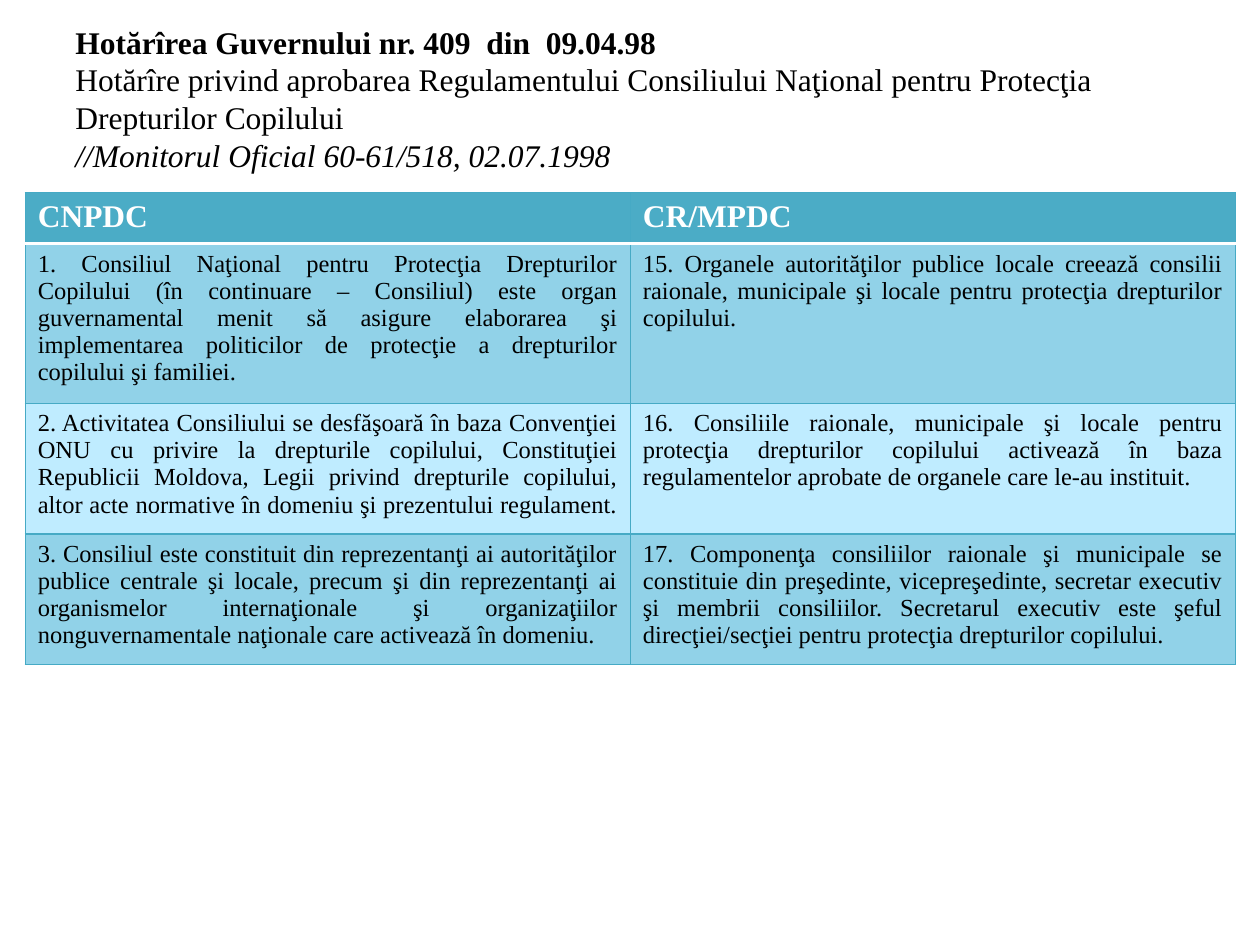
import pptx
import pptx.dml.color
import pptx.enum.text
import pptx.oxml
import pptx.oxml.ns
import pptx.util

Pt = pptx.util.Pt
FONT = "Times New Roman"
BORDER = "46AAC5"
HEADER_FILL = "4BACC6"
BAND_FILLS = ["91D2E8", "BFECFF"]

TITLE_LINES = [
    ("Hotărîrea Guvernului nr. 409\u00a0 din\u00a0 09.04.98 ", True, False),
    ("Hotărîre privind aprobarea Regulamentului Consiliului Naţional "
     "pentru Protecţia Drepturilor Copilului ", False, False),
    ("//Monitorul Oficial 60-61/518, 02.07.1998", False, True),
]

HEADERS = ("CNPDC", "CR/MPDC")
ARTICLES = [
    ("1. Consiliul Naţional pentru Protecţia Drepturilor Copilului (în continuare – "
     "Consiliul) este organ guvernamental menit să asigure elaborarea şi implementarea "
     "politicilor de protecţie a drepturilor copilului şi familiei. ",
     "15. Organele autorităţilor publice locale creează consilii raionale, municipale "
     "şi locale pentru protecţia drepturilor copilului. "),
    ("2. Activitatea Consiliului se desfăşoară în baza Convenţiei ONU cu privire la "
     "drepturile copilului, Constituţiei Republicii Moldova, Legii privind drepturile "
     "copilului, altor acte normative în domeniu şi prezentului regulament. ",
     "16. Consiliile raionale, municipale şi locale pentru protecţia drepturilor "
     "copilului activează în baza regulamentelor aprobate de organele care le-au "
     "instituit. "),
    ("3. Consiliul este constituit din reprezentanţi ai autorităţilor publice centrale "
     "şi locale, precum şi din reprezentanţi ai organismelor internaţionale şi "
     "organizaţiilor nonguvernamentale naţionale care activează în domeniu.",
     "17. Componenţa consiliilor raionale şi municipale se constituie din preşedinte, "
     "vicepreşedinte, secretar executiv şi membrii consiliilor. Secretarul executiv "
     "este şeful direcţiei/secţiei pentru protecţia drepturilor copilului."),
]
ROW_HEIGHTS = [29.2, 84.6, 69.4, 72.8]


def color(value):
    return pptx.dml.color.RGBColor.from_string(value)


def add_run(paragraph, text, size, text_color, bold=False, italic=False):
    run = paragraph.add_run()
    run.text = text
    run.font.name = FONT
    run.font.size = Pt(size)
    run.font.bold = bold
    run.font.italic = italic
    run.font.color.rgb = color(text_color)


def add_title(slide):
    frame = slide.shapes.add_textbox(Pt(36), Pt(21.6), Pt(648), Pt(90)).text_frame
    frame.word_wrap = True
    frame.vertical_anchor = pptx.enum.text.MSO_ANCHOR.MIDDLE
    # The deeper bottom inset lifts the text clear of the table
    frame.margin_top = 0
    frame.margin_bottom = Pt(21)
    paragraph = frame.paragraphs[0]
    paragraph.line_spacing = Pt(21.5)
    for index, (text, bold, italic) in enumerate(TITLE_LINES):
        if index:
            paragraph.add_line_break()
        add_run(paragraph, text, 18, "000000", bold, italic)


def set_borders(cell, **changes):
    """Draw the four sides; changes maps a side to its (colour, width)."""
    properties = cell._tc.get_or_add_tcPr()
    for position, side in enumerate("LRTB"):
        line_color, width = changes.get(side, (BORDER, 0.75))
        properties.insert(position, pptx.oxml.parse_xml(
            f'<a:ln{side} {pptx.oxml.ns.nsdecls("a")} w="{Pt(width)}">'
            f'<a:solidFill><a:srgbClr val="{line_color}"/></a:solidFill></a:ln{side}>'))


def fill_cell(cell, text, fill, size, text_color, bold, alignment):
    cell.fill.solid()
    cell.fill.fore_color.rgb = color(fill)
    paragraph = cell.text_frame.paragraphs[0]
    paragraph.alignment = alignment
    add_run(paragraph, text, size, text_color, bold)


def add_articles_table(slide):
    rows = [HEADERS] + ARTICLES
    table = slide.shapes.add_table(len(rows), len(HEADERS), Pt(14.4), Pt(110.2),
                                   Pt(691.6), Pt(sum(ROW_HEIGHTS))).table
    for column in table.columns:
        column.width = Pt(345.8)
    align = pptx.enum.text.PP_ALIGN
    rule = ("FFFFFF", 2)
    for row_index, texts in enumerate(rows):
        table.rows[row_index].height = Pt(ROW_HEIGHTS[row_index])
        for column_index, text in enumerate(texts):
            cell = table.cell(row_index, column_index)
            if row_index == 0:
                fill_cell(cell, text, HEADER_FILL, 18, "FFFFFF", True, align.LEFT)
                set_borders(cell, B=rule)
            else:
                fill = BAND_FILLS[(row_index - 1) % 2]
                fill_cell(cell, text, fill, 14, "000000", False, align.JUSTIFY)
                set_borders(cell, **({"T": rule} if row_index == 1 else {}))


def main():
    presentation = pptx.Presentation()
    presentation.slide_width = Pt(720)
    presentation.slide_height = Pt(540)
    slide = presentation.slides.add_slide(presentation.slide_layouts[6])

    # Heading with the decision and its publication
    add_title(slide)
    # National articles beside the local ones
    add_articles_table(slide)

    presentation.save("out.pptx")


if __name__ == "__main__":
    main()
